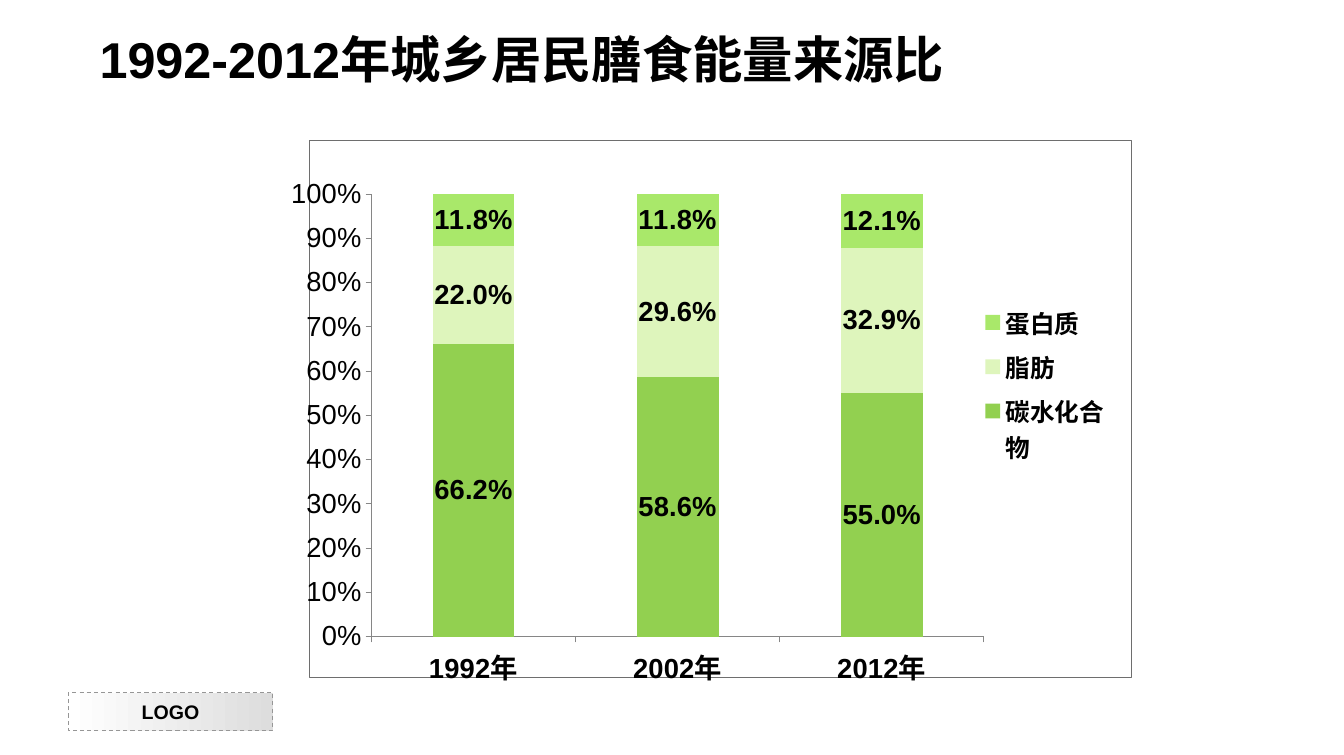
"""Build a slide with a stacked chart of dietary energy sources."""
from dataclasses import dataclass

from lxml import etree
from pptx import Presentation
from pptx.chart import data
from pptx.dml import color as dml
from pptx.enum import chart as ch, dml as line, shapes, text
from pptx.oxml import ns
from pptx.util import Inches, Pt

HUES = {"ink": "000000", "white": "FFFFFF", "mist": "DDDDDD", "dash": "969696",
        "axis": "868686", "frame": "6E6E6E",
        "carb": "92D050", "fat": "DEF5BC", "meat": "A9E86A"}
FACE = "Arial"
YEARS = ("1992年", "2002年", "2012年")


@dataclass
class Part:
    name: str
    hue: str
    vals: tuple[float, ...]


@dataclass
class Area:
    x: float
    y: float
    w: float
    h: float


PARTS = (Part("碳水化合物", "carb", (0.662, 0.586, 0.55)),
         Part("脂肪", "fat", (0.22, 0.296, 0.329)),
         Part("蛋白质", "meat", (0.118, 0.118, 0.121)))


def rgb(hue: str) -> dml.RGBColor:
    return dml.RGBColor.from_string(HUES[hue])


def style(font, size: float, bold: bool = True) -> None:
    font.name, font.size, font.bold = FACE, Pt(size), bold
    font.color.rgb = rgb("ink")


def box(area: Area) -> tuple:
    return tuple(Inches(n) for n in (area.x, area.y, area.w, area.h))


def place(node, area: Area, inner: bool = False) -> None:
    for old in node.findall(ns.qn("c:layout")):
        node.remove(old)
    lay = etree.Element(ns.qn("c:layout"))
    man = etree.SubElement(lay, ns.qn("c:manualLayout"))
    rows = [("layoutTarget", "inner")] if inner else []
    rows += [("xMode", "edge"), ("yMode", "edge"), ("x", area.x),
             ("y", area.y), ("w", area.w), ("h", area.h)]
    for tag, val in rows:
        etree.SubElement(man, ns.qn(f"c:{tag}")).set("val", str(val))
    node.insert(0 if inner else 1, lay)


def frame(chart) -> None:
    prop = etree.Element(ns.qn("c:spPr"))
    etree.SubElement(prop, ns.qn("a:noFill"))
    edge = etree.SubElement(prop, ns.qn("a:ln"), w=str(Pt(0.75)))
    fill = etree.SubElement(edge, ns.qn("a:solidFill"))
    etree.SubElement(fill, ns.qn("a:srgbClr"), val=HUES["frame"])
    chart.element.find(ns.qn("c:chart")).addnext(prop)


def add_logo(slide, area: Area) -> None:
    logo = slide.shapes.add_shape(shapes.MSO_SHAPE.RECTANGLE, *box(area))
    logo.shadow.inherit = False
    logo.fill.gradient()
    logo.fill.gradient_angle = 0
    for stop, hue in zip(logo.fill.gradient_stops, ("white", "mist")):
        stop.color.rgb = rgb(hue)
    logo.line.color.rgb = rgb("dash")
    logo.line.width = Pt(0.75)
    logo.line.dash_style = line.MSO_LINE.DASH
    body = logo.text_frame
    body.word_wrap = False
    body.vertical_anchor = text.MSO_ANCHOR.MIDDLE
    para = body.paragraphs[0]
    para.text = "LOGO"
    para.alignment = text.PP_ALIGN.CENTER
    style(para.font, 14)


def add_title(slide, area: Area) -> None:
    body = slide.shapes.add_textbox(*box(area)).text_frame
    body.word_wrap = True
    body.auto_size = text.MSO_AUTO_SIZE.SHAPE_TO_FIT_TEXT
    para = body.paragraphs[0]
    para.text = "1992-2012年城乡居民膳食能量来源比"
    style(para.font, 36)


def add_bars(slide, area: Area) -> None:
    table = data.CategoryChartData(number_format="0.0%")
    table.categories = YEARS
    for part in PARTS:
        table.add_series(part.name, part.vals)
    kind = ch.XL_CHART_TYPE.COLUMN_STACKED_100
    chart = slide.shapes.add_chart(kind, *box(area), table).chart
    chart.has_title = False
    style(chart.font, 12, False)
    plot = chart.plots[0]
    plot.gap_width, plot.overlap = 150, 100
    plot.vary_by_categories = False
    for part, bar in zip(PARTS, plot.series):
        bar.format.fill.solid()
        bar.format.fill.fore_color.rgb = rgb(part.hue)
        tags = bar.data_labels
        tags.show_value = True
        tags.number_format, tags.number_format_is_linked = "0.0%", False
        tags.position = ch.XL_LABEL_POSITION.CENTER
        style(tags.font, 20)
    for axis, bold in ((chart.category_axis, True), (chart.value_axis, False)):
        axis.has_major_gridlines = False
        axis.major_tick_mark = ch.XL_TICK_MARK.OUTSIDE
        axis.format.line.color.rgb = rgb("axis")
        axis.format.line.width = Pt(0.75)
        style(axis.tick_labels.font, 20, bold)
    scale = chart.value_axis
    scale.minimum_scale, scale.maximum_scale, scale.major_unit = 0, 1, 0.1
    scale.tick_labels.number_format = "0%"
    scale.tick_labels.number_format_is_linked = False
    chart.has_legend = True
    chart.legend.position = ch.XL_LEGEND_POSITION.RIGHT
    chart.legend.include_in_layout = False
    style(chart.legend.font, 18)
    root = chart.element.find(ns.qn("c:chart"))
    place(root.find(ns.qn("c:plotArea")), Area(0.076, 0.1, 0.745, 0.824), True)
    place(root.find(ns.qn("c:legend")), Area(0.81, 0.29, 0.17, 0.33))
    frame(chart)


def main() -> None:
    deck = Presentation()
    deck.slide_width, deck.slide_height = Inches(13.35), Inches(7.5)
    slide = deck.slides.add_slide(deck.slide_layouts[6])
    add_logo(slide, Area(0.68, 6.88, 2.03, 0.38))
    add_bars(slide, Area(2.89, 1.39, 8.35, 5.43))
    add_title(slide, Area(0.89, 0.23, 9.45, 0.71))
    deck.save("out.pptx")


if __name__ == "__main__":
    main()
